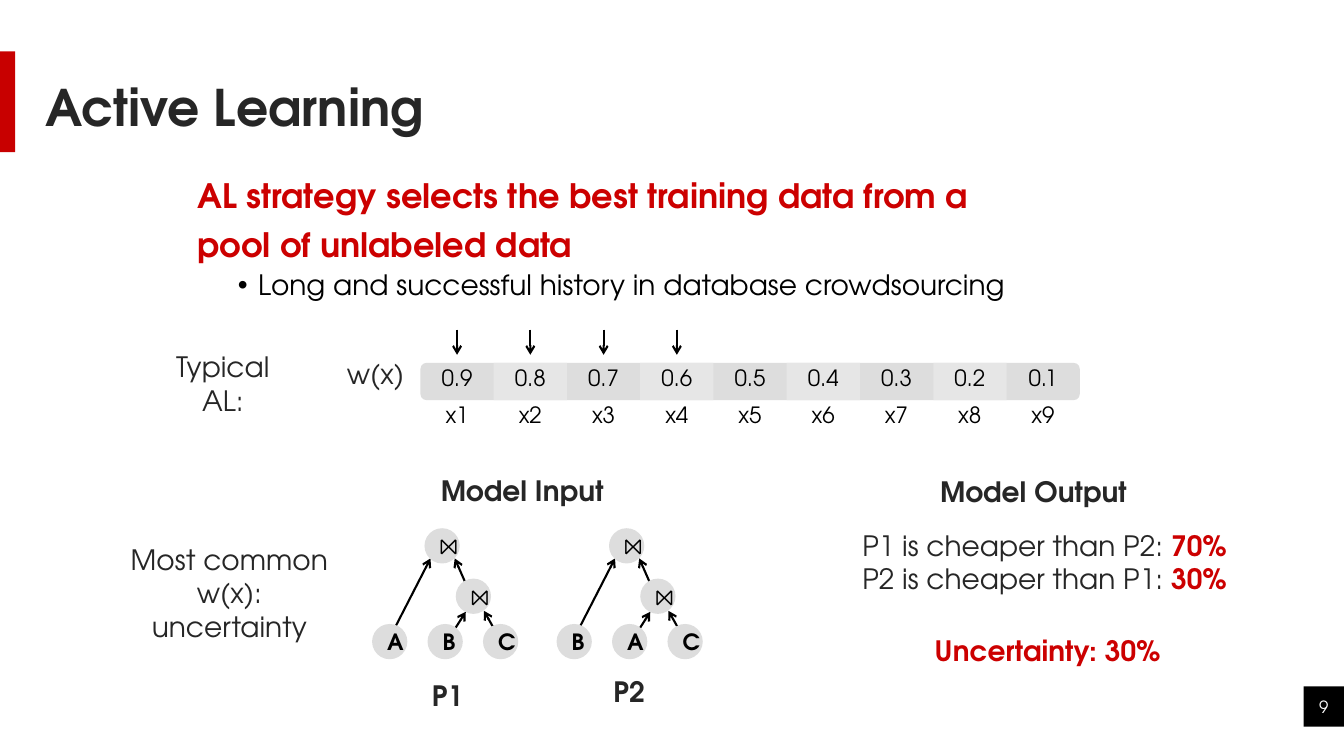
import pptx
import pptx.util
import pptx.dml.color
import pptx.enum.shapes
import pptx.enum.text
import pptx.oxml
import pptx.oxml.ns

# Content
TITLE = "Active Learning"
CLAIM = "AL strategy selects the best training data from a pool of unlabeled data"
BULLET = "Long and successful history in database crowdsourcing"
PAGE_NUMBER = "9"
WEIGHTS = ["0.9", "0.8", "0.7", "0.6", "0.5", "0.4", "0.3", "0.2", "0.1"]
SAMPLES = [f"x{number}" for number in range(1, 10)]
SELECTED = 4
PLANS = ["ABC", "BAC"]  # leaves of each join tree, left to right

# Labels: paragraphs, box (left, top, width, height), format.
# A tuple paragraph holds plain text followed by highlighted text.
LABELS = [
    (["w(x)"], (3.12, 3.49, 1.21, 0.44), {}),
    (["Typical", "AL:"], (1.15, 3.42, 2.12, 0.77), {}),
    (["Most common", "w(x):", "uncertainty"], (1.15, 5.33, 2.25, 1.11), {}),
    (["Model Input"], (4.12, 4.65, 2.12, 0.44), {"bold": True}),
    (["Model Output"], (9.19, 4.66, 2.12, 0.44), {"bold": True}),
    (["P1"], (4.12, 6.68, 0.64, 0.44), {"bold": True}),
    (["P2"], (5.92, 6.64, 0.64, 0.44), {"bold": True}),
    ([("P1 is cheaper than P2: ", "70%"), ("P2 is cheaper than P1: ", "30%")],
     (8.24, 5.19, 4.24, 0.77), {}),
    (["Uncertainty: 30%"], (8.59, 6.24, 3.6, 0.44), {"bold": True, "color": "accent"}),
]

COLORS = {"bar": "C80000", "accent": "CC0000", "text": "262626", "black": "000000",
          "white": "FFFFFF", "cell": "DDDDDD", "stripe": "E6E6E6"}
FONT = "TeX Gyre Adventor"

# Layout
WIDTH, HEIGHT = 13.33, 7.5
STRIP_LEFT, STRIP_TOP, STRIP_WIDTH, STRIP_HEIGHT = 4.17, 3.6, 6.54, 0.37
COLUMN = STRIP_WIDTH / len(WEIGHTS)
TREE_LEFT, TREE_TOP, TREE_STEP = 3.69, 5.24, 1.83
NODE, NODE_STEP, LEAF_ROW = 0.35, 0.55, 0.95
JOINS = [(0.52, 0), (0.83, 0.5)]  # offsets from the tree's corner
EDGES = [((0.21, 1.02), (0.58, 0.3)), ((0.93, 0.55), (0.82, 0.3)),
         ((1.2, 0.98), (1.11, 0.82)), ((0.77, 1.08), (0.93, 0.83))]

MIDDLE = pptx.enum.text.MSO_ANCHOR.MIDDLE
TOP = pptx.enum.text.MSO_ANCHOR.TOP
CENTER = pptx.enum.text.PP_ALIGN.CENTER
LEFT = pptx.enum.text.PP_ALIGN.LEFT
KINDS = pptx.enum.shapes.MSO_SHAPE


def inches(values):
    return [pptx.util.Inches(value) for value in values]


def rgb(name):
    return pptx.dml.color.RGBColor.from_string(COLORS[name])


def write(frame, paragraphs, size=20, color="text", bold=False, align=CENTER,
          anchor=TOP, spacing=None, before=0, after=0):
    frame.word_wrap = True
    frame.vertical_anchor = anchor
    for index, content in enumerate(paragraphs):
        para = frame.add_paragraph() if index else frame.paragraphs[0]
        para.alignment = align
        para.space_before = pptx.util.Pt(before)
        para.space_after = pptx.util.Pt(after)
        if spacing:
            para.line_spacing = spacing
        parts = (content,) if isinstance(content, str) else content
        for position, text in enumerate(parts):
            span = para.add_run()
            span.text = text
            span.font.name = FONT
            span.font.size = pptx.util.Pt(size)
            span.font.bold = bold or position > 0
            span.font.color.rgb = rgb("accent" if position else color)


def add_label(page, paragraphs, box, **style):
    label = page.shapes.add_textbox(*inches(box))
    write(label.text_frame, paragraphs, **style)


def add_block(page, kind, box, fill):
    block = page.shapes.add_shape(kind, *inches(box))
    block.shadow.inherit = False
    block.fill.solid()
    block.fill.fore_color.rgb = rgb(fill)
    block.line.fill.background()
    return block


def add_arrow(page, start, end):
    arrow = page.shapes.add_connector(
        pptx.enum.shapes.MSO_CONNECTOR.STRAIGHT, *inches((*start, *end)))
    arrow.line.width = pptx.util.Pt(1.5)
    arrow.line.color.rgb = rgb("black")
    head = pptx.oxml.parse_xml(
        f'<a:tailEnd {pptx.oxml.ns.nsdecls("a")} type="arrow"/>')
    arrow.line._get_or_add_ln().append(head)
    arrow._element.spPr.append(
        pptx.oxml.parse_xml(f'<a:effectLst {pptx.oxml.ns.nsdecls("a")}/>'))


def add_row(page, values, top):
    frame = page.shapes.add_table(
        1, len(values), *inches((STRIP_LEFT, top, STRIP_WIDTH, STRIP_HEIGHT)))
    table = frame.table
    table.first_row = table.horz_banding = False
    # "No Style, No Grid"
    style = table._tbl.tblPr.find(pptx.oxml.ns.qn("a:tableStyleId"))
    style.text = "{2D5ABB26-0587-4C30-8999-92F81FD0307C}"
    for column, value in enumerate(values):
        table.columns[column].width = pptx.util.Inches(COLUMN)
        cell = table.cell(0, column)
        cell.fill.background()
        write(cell.text_frame, [value], size=16, color="black")


def add_tree(page, leaves, left):
    for start, end in EDGES:
        add_arrow(page, *[(left + x, TREE_TOP + y) for x, y in (start, end)])
    nodes = [("⨝", x, y) for x, y in JOINS]
    nodes += [(leaf, NODE_STEP * column, LEAF_ROW) for column, leaf in enumerate(leaves)]
    for text, x, y in nodes:
        node = add_block(page, KINDS.OVAL, (left + x, TREE_TOP + y, NODE, NODE), "cell")
        write(node.text_frame, [text], size=16, color="black", bold=True, anchor=MIDDLE)


def place(holder, box):
    holder.left, holder.top, holder.width, holder.height = inches(box)
    holder.text_frame.auto_size = pptx.enum.text.MSO_AUTO_SIZE.NONE


def main():
    deck = pptx.Presentation()
    deck.slide_width, deck.slide_height = inches((WIDTH, HEIGHT))
    page = deck.slides.add_slide(deck.slide_layouts[1])

    # Title, accent bar and page number
    add_block(page, KINDS.RECTANGLE, (0, 0.51, 0.15, 1), "bar")
    add_block(page, KINDS.RECTANGLE, (12.93, 6.81, 0.4, 0.4), "black")
    add_label(page, [PAGE_NUMBER], (12.86, 6.81, 0.54, 0.4),
              size=12, color="white", anchor=MIDDLE)
    title, body = page.placeholders
    place(title, (0.35, 0.34, 11.5, 1.5))
    write(title.text_frame, [TITLE], size=36, bold=True, align=LEFT,
          anchor=MIDDLE, spacing=0.9)

    # Claim and bullet
    add_label(page, [CLAIM], (1.86, 1.61, 8.46, 0.54), size=24, color="accent",
              bold=True, align=LEFT, spacing=1.2, before=10)
    place(body, (1.86, 2.54, 9.13, 0.44))
    write(body.text_frame, [BULLET], color="black", align=LEFT, spacing=1.2, after=9)
    para = body.text_frame.paragraphs[0]
    para.level = 1
    layout = para._p.get_or_add_pPr()
    layout.set("marL", str(pptx.util.Inches(0.6)))
    layout.set("indent", str(pptx.util.Inches(-0.2)))
    layout.append(pptx.oxml.parse_xml(
        f'<a:buFont {pptx.oxml.ns.nsdecls("a")} typeface="Arial"/>'))
    layout.append(pptx.oxml.parse_xml(
        f'<a:buChar {pptx.oxml.ns.nsdecls("a")} char="•"/>'))

    # Weight strip with its values and samples
    add_block(page, KINDS.ROUNDED_RECTANGLE,
              (STRIP_LEFT, STRIP_TOP, STRIP_WIDTH, STRIP_HEIGHT), "cell")
    for column in range(1, len(WEIGHTS), 2):
        add_block(page, KINDS.RECTANGLE,
                  (STRIP_LEFT + column * COLUMN, STRIP_TOP, COLUMN, STRIP_HEIGHT), "stripe")
    add_row(page, WEIGHTS, 3.62)
    add_row(page, SAMPLES, 3.99)
    for column in range(SELECTED):
        x = STRIP_LEFT + (column + 0.5) * COLUMN
        add_arrow(page, (x, 3.27), (x, 3.52))

    # Labels and join trees
    for paragraphs, box, style in LABELS:
        add_label(page, paragraphs, box, **style)
    for index, leaves in enumerate(PLANS):
        add_tree(page, leaves, TREE_LEFT + index * TREE_STEP)

    deck.save("out.pptx")


if __name__ == "__main__":
    main()
